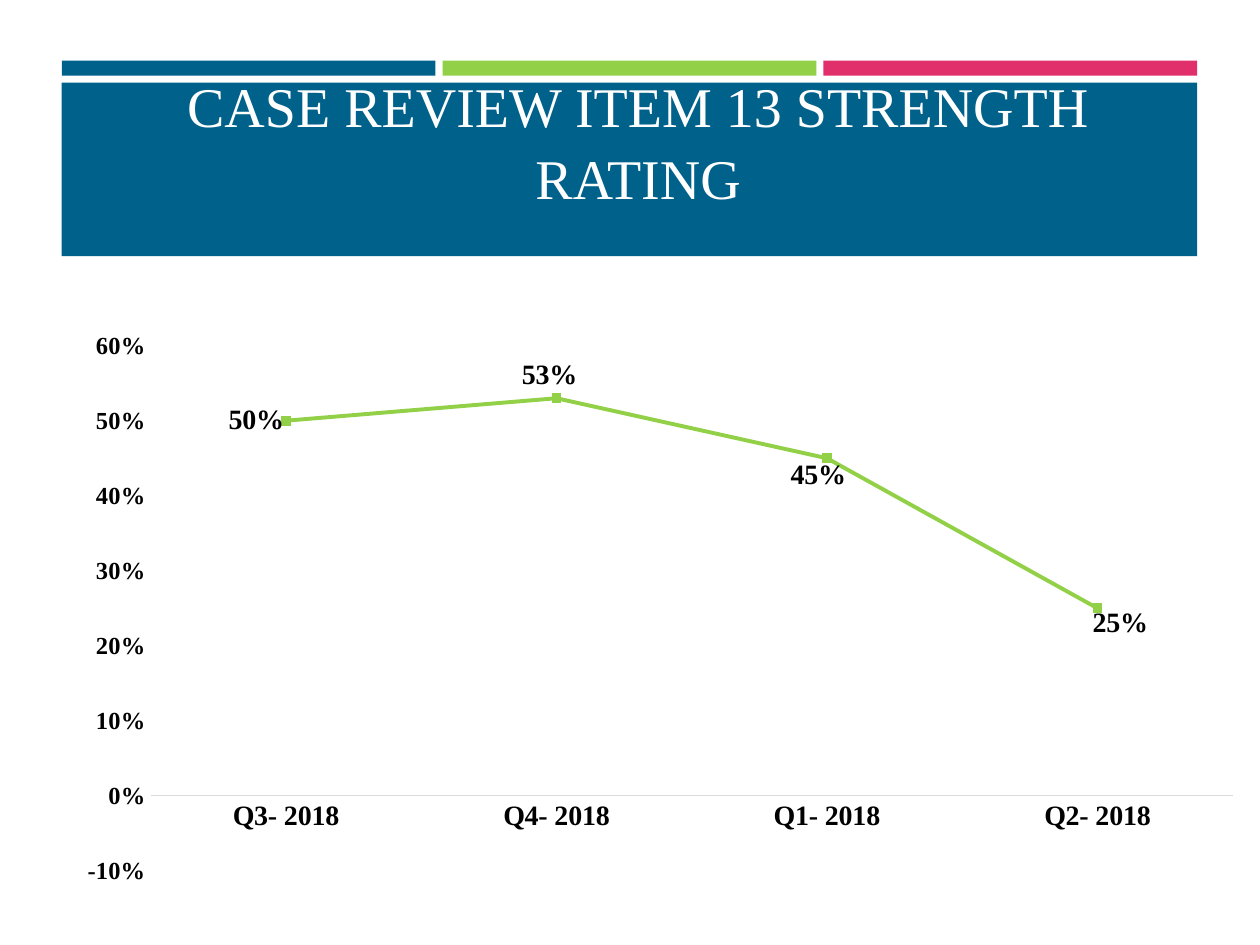
from lxml import etree
from pptx import Presentation
from pptx.chart.data import CategoryChartData
from pptx.dml.color import RGBColor
from pptx.enum.chart import XL_CHART_TYPE as ChartType, XL_LABEL_POSITION as LabelPos
from pptx.enum.chart import XL_TICK_MARK as TickMark
from pptx.enum.shapes import MSO_SHAPE as Shape
from pptx.enum.text import MSO_ANCHOR as Anchor, PP_ALIGN as Align
from pptx.oxml.ns import qn
from pptx.util import Pt

COLORS = {"blue": "00618A", "green": "92D047", "pink": "E12F6B",
          "white": "FFFFFF", "black": "000000", "gray": "D9D9D9"}
FONT = "Times New Roman"
TITLE = "CASE REVIEW ITEM 13 STRENGTH RATING"
RATINGS = [("Q3- 2018", 0.5), ("Q4- 2018", 0.53), ("Q1- 2018", 0.45), ("Q2- 2018", 0.25)]
LABEL_SHIFTS = [(-17, 0), (-4, -13), (-5, 10), (13, 8.5)]
STRIPES = ["blue", "green", "pink"]
LEFT, WIDTH, GAP = 35.3, 648.8, 4
CHART_BOX = (12.2, 157, 692.6, 369.4)
PLOT_BOX = (74, 40.6, 618.6, 300)


def color(name):
    return RGBColor.from_string(COLORS[name])


def style(font, size, shade="black", bold=False):
    font.name, font.size, font.bold = FONT, Pt(size), bold
    font.color.rgb = color(shade)


def add_bar(page, left, top, width, height, shade):
    bar = page.shapes.add_shape(Shape.RECTANGLE, Pt(left), Pt(top), Pt(width), Pt(height))
    bar.shadow.inherit = False
    bar.fill.solid()
    bar.fill.fore_color.rgb = color(shade)
    bar.line.fill.background()


def add_text(page, text, left, top, width, height, size, shade, spacing):
    box = page.shapes.add_textbox(Pt(left), Pt(top), Pt(width), Pt(height))
    frame = box.text_frame
    frame.word_wrap = True
    frame.vertical_anchor = Anchor.BOTTOM
    para = frame.paragraphs[0]
    para.alignment = Align.CENTER
    para.line_spacing = spacing
    span = para.add_run()
    span.text = text
    style(span.font, size, shade)


def manual_layout(**settings):
    layout = etree.Element(qn("c:layout"))
    manual = etree.SubElement(layout, qn("c:manualLayout"))
    for tag, value in settings.items():
        etree.SubElement(manual, qn("c:" + tag)).set("val", str(value))
    return layout


def add_rating_chart(page):
    data = CategoryChartData(number_format="0%")
    data.categories = [quarter for quarter, rating in RATINGS]
    data.add_series("Series 1", [rating for quarter, rating in RATINGS])
    chart = page.shapes.add_chart(ChartType.LINE_STACKED, *map(Pt, CHART_BOX), data).chart
    chart.has_legend = chart.has_title = False
    style(chart.font, 10)
    chart.font.name = "Calibri"

    for axis, size in ((chart.category_axis, 16), (chart.value_axis, 14)):
        axis.major_tick_mark = axis.minor_tick_mark = TickMark.NONE
        axis.has_major_gridlines = False
        style(axis.tick_labels.font, size, bold=True)
    chart.category_axis.format.line.color.rgb = color("gray")
    chart.category_axis.format.line.width = Pt(0.75)
    values = chart.value_axis
    values.format.line.fill.background()
    values.minimum_scale, values.maximum_scale, values.major_unit = -0.1, 0.6, 0.1
    values.tick_labels.number_format = "0%"
    values.tick_labels.number_format_is_linked = False

    chart_width, chart_height = CHART_BOX[2:]
    left, top, width, height = PLOT_BOX
    area = chart.plots[0]
    area.vary_by_categories = False
    plot_area = chart.element.find(".//" + qn("c:plotArea"))
    for old in plot_area.findall(qn("c:layout")):
        plot_area.remove(old)
    plot_area.insert(0, manual_layout(
        layoutTarget="inner", xMode="edge", yMode="edge",
        x=left / chart_width, y=top / chart_height,
        w=width / chart_width, h=height / chart_height))

    series = area.series[0]
    series.smooth = False
    series.marker.style = None
    series.format.line.color.rgb = color("green")
    series.format.line.width = Pt(2.25)
    labels = series.data_labels
    labels.show_value = True
    labels.number_format, labels.number_format_is_linked = "0%", False
    labels.position = LabelPos.CENTER
    style(labels.font, 16, bold=True)
    for index, (across, down) in enumerate(LABEL_SHIFTS):
        label = series.points[index].data_label
        label.position = LabelPos.CENTER
        style(label.font, 16, bold=True)
    for item, (across, down) in zip(series.data_labels._element.findall(qn("c:dLbl")), LABEL_SHIFTS):
        item.insert(1, manual_layout(x=across / chart_width, y=down / chart_height))


def main():
    deck = Presentation()
    deck.slide_width, deck.slide_height = Pt(720), Pt(540)
    page = deck.slides.add_slide(deck.slide_layouts[6])
    stripe_width = (WIDTH - GAP * (len(STRIPES) - 1)) / len(STRIPES)
    for index, shade in enumerate(STRIPES):
        add_bar(page, LEFT + index * (stripe_width + GAP), 34.7, stripe_width, 8.5, shade)
    add_bar(page, LEFT, 47.2, WIDTH, 99.2, "blue")
    add_text(page, TITLE, 60.5, 60.5, 608.4, 63.4, size=32, shade="white", spacing=1.07)
    add_rating_chart(page)
    deck.save("out.pptx")


if __name__ == "__main__":
    main()
